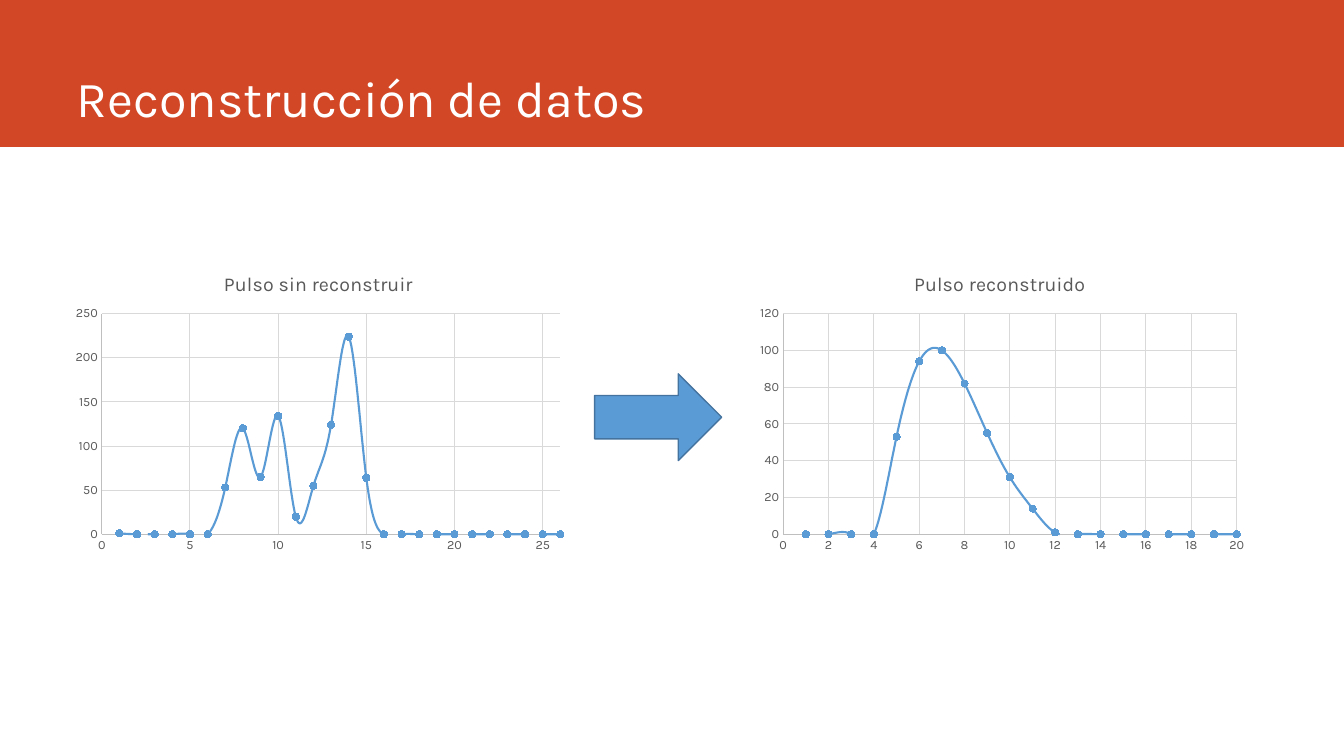
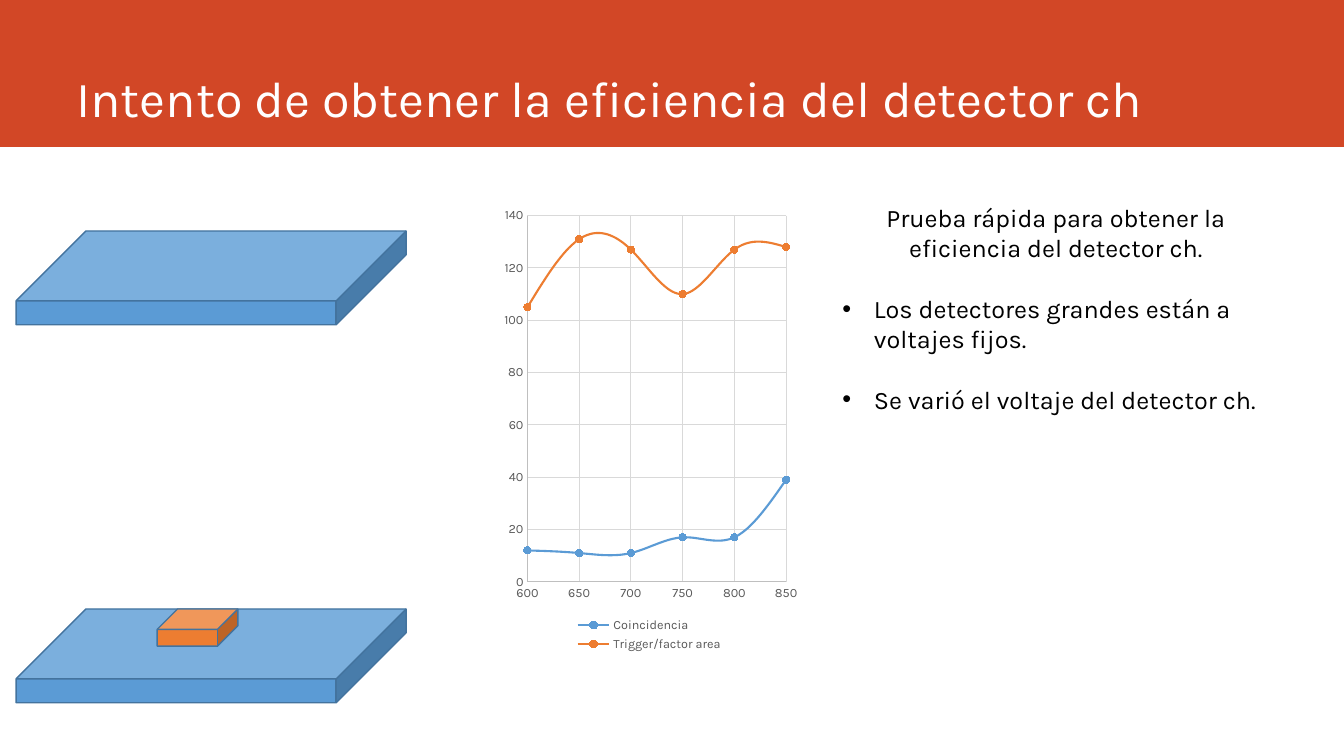
"""Build two slides on pulse reconstruction and detector efficiency."""
from lxml import etree
from pptx import Presentation
from pptx.chart.data import XyChartData
from pptx.dml.color import RGBColor
from pptx.enum import chart as ch, shapes, text
from pptx.oxml import ns
from pptx.util import Pt

FONT = "Karla"
COLORS = {"band": "D24726", "white": "FFFFFF", "black": "000000", "gray": "595959",
          "axis": "BFBFBF", "grid": "D9D9D9", "blue": "5B9BD5", "orange": "ED7D31",
          "outline": "43739E"}
SHAPE = shapes.MSO_SHAPE
rgb = {name: RGBColor.from_string(value) for name, value in COLORS.items()}


def style_font(font, size, color):
    font.name, font.size, font.bold = FONT, Pt(size), False
    font.color.rgb = rgb[color]


def make_layout(values, inner=False):
    layout = etree.Element(ns.qn("c:layout"))
    manual = etree.SubElement(layout, ns.qn("c:manualLayout"))
    pairs = [("layoutTarget", "inner")] if inner else []
    pairs += [("xMode", "edge"), ("yMode", "edge"), *zip("xywh", values)]
    for tag, value in pairs:
        etree.SubElement(manual, ns.qn("c:" + tag)).set("val", str(value))
    return layout


prs = Presentation()
prs.slide_width, prs.slide_height = Pt(960), Pt(540)

slides = []
for title in ["Reconstrucción de datos", "Intento de obtener la eficiencia del detector ch"]:
    s = prs.slides.add_slide(prs.slide_layouts[6])
    band = s.shapes.add_shape(SHAPE.RECTANGLE, 0, 0, prs.slide_width, Pt(105))
    band.shadow.inherit = False
    band.fill.solid()
    band.fill.fore_color.rgb = rgb["band"]
    band.line.fill.background()
    tf = s.shapes.add_textbox(Pt(47.5), 0, Pt(846.7), Pt(95)).text_frame
    tf.word_wrap = True
    tf.vertical_anchor = text.MSO_ANCHOR.BOTTOM
    tf.text = title
    style_font(tf.paragraphs[0].runs[0].font, 36, "white")
    slides.append(s)
pulses, efficiency = slides

raw = [1] + [0] * 5 + [53, 120, 65, 134, 20, 55, 124, 224, 64] + [0] * 11
rebuilt = [0] * 4 + [53, 94, 100, 82, 55, 31, 14, 1] + [0] * 8
charts = [
    dict(slide=pulses, box=(47.5, 183, 360, 216), title="Pulso sin reconstruir",
         x=range(1, 27), series=[("Series 1", raw, "blue")],
         scales=[(0, 26, 5), (0, 250, 50)], plot=(0.07, 0.19, 0.91, 0.73)),
    dict(slide=pulses, box=(534.2, 183, 360, 216), title="Pulso reconstruido",
         x=range(1, 21), series=[("Series 1", rebuilt, "blue")],
         scales=[(0, 20, 2), (0, 120, 20)], plot=(0.07, 0.19, 0.9, 0.73)),
    dict(slide=efficiency, box=(355, 141, 217.4, 327), title=None,
         x=range(600, 851, 50),
         series=[("Coincidencia", [12, 11, 11, 17, 17, 39], "blue"),
                 ("Trigger/factor area", [105, 131, 127, 110, 127, 128], "orange")],
         scales=[(600, 850, 50), (0, 140, 20)], plot=(0.1, 0.04, 0.85, 0.8)),
]
for c in charts:
    data = XyChartData()
    for name, values, color in c["series"]:
        points = data.add_series(name)
        for x, y in zip(c["x"], values):
            points.add_data_point(x, y)
    chart = c["slide"].shapes.add_chart(
        ch.XL_CHART_TYPE.XY_SCATTER_SMOOTH, *map(Pt, c["box"]), data).chart
    style_font(chart.font, 10, "black")

    chart.has_title = c["title"] is not None
    if c["title"]:
        tf = chart.chart_title.text_frame
        tf.text = c["title"]
        style_font(tf.paragraphs[0].runs[0].font, 14, "gray")

    chart.has_legend = len(c["series"]) > 1
    if chart.has_legend:
        legend = chart.legend
        legend.position = ch.XL_LEGEND_POSITION.BOTTOM
        legend.include_in_layout = False
        style_font(legend.font, 9, "gray")
        el = legend._element
        for old in el.findall(ns.qn("c:layout")):
            el.remove(old)
        el.find(ns.qn("c:legendPos")).addnext(make_layout((0.26, 0.91, 0.48, 0.09)))

    for axis, (low, high, step) in zip((chart.category_axis, chart.value_axis), c["scales"]):
        axis.minimum_scale, axis.maximum_scale, axis.major_unit = low, high, step
        axis.major_tick_mark = axis.minor_tick_mark = ch.XL_TICK_MARK.NONE
        axis.has_major_gridlines = True
        style_font(axis.tick_labels.font, 9, "gray")
        for line, color in [(axis.format.line, "axis"),
                            (axis.major_gridlines.format.line, "grid")]:
            line.color.rgb = rgb[color]
            line.width = Pt(0.75)

    plot = chart.plots[0]
    plot.vary_by_categories = False
    for series, (name, values, color) in zip(plot.series, c["series"]):
        series._element.get_or_add_smooth().val = True
        series.format.line.color.rgb = rgb[color]
        series.format.line.width = Pt(1.5)
        marker = series.marker
        marker.style, marker.size = ch.XL_MARKER_STYLE.CIRCLE, 5
        marker.format.fill.solid()
        marker.format.fill.fore_color.rgb = rgb[color]
        marker.format.line.color.rgb = rgb[color]

    area = chart._chartSpace.find(".//" + ns.qn("c:plotArea"))
    for old in area.findall(ns.qn("c:layout")):
        area.remove(old)
    area.insert(0, make_layout(c["plot"], inner=True))

for s, kind, box, color, depth in [
    (pulses, SHAPE.RIGHT_ARROW, (424.8, 267, 90.7, 62), "blue", None),
    (efficiency, SHAPE.CUBE, (11.5, 435, 278.6, 67), "blue", 0.745),
    (efficiency, SHAPE.CUBE, (11.5, 165, 278.6, 67), "blue", 0.745),
    (efficiency, SHAPE.CUBE, (112.3, 435, 57.6, 26.6), "orange", 0.547),
]:
    sp = s.shapes.add_shape(kind, *map(Pt, box))
    sp.shadow.inherit = False
    sp.fill.solid()
    sp.fill.fore_color.rgb = rgb[color]
    sp.line.color.rgb = rgb["outline"]
    sp.line.width = Pt(1)
    if depth:
        sp.adjustments[0] = depth

tf = efficiency.shapes.add_textbox(Pt(594.7), Pt(141), Pt(319), Pt(181.4)).text_frame
tf.word_wrap = True
notes = ["Prueba rápida para obtener la eficiencia del detector ch.",
         "Los detectores grandes están a voltajes fijos.",
         "Se varió el voltaje del detector ch."]
for i, note in enumerate(notes):
    p = tf.add_paragraph() if i else tf.paragraphs[0]
    p.text = note
    style_font(p.runs[0].font, 18, "black")
    if i == 0:
        p.alignment = text.PP_ALIGN.CENTER
        continue
    p.space_before = Pt(21.7)
    pPr = p._p.get_or_add_pPr()
    pPr.set("marL", str(Pt(22.5)))
    pPr.set("indent", str(-Pt(22.5)))
    etree.SubElement(pPr, ns.qn("a:buFont")).set("typeface", "Arial")
    etree.SubElement(pPr, ns.qn("a:buChar")).set("char", "•")

prs.save("out.pptx")
